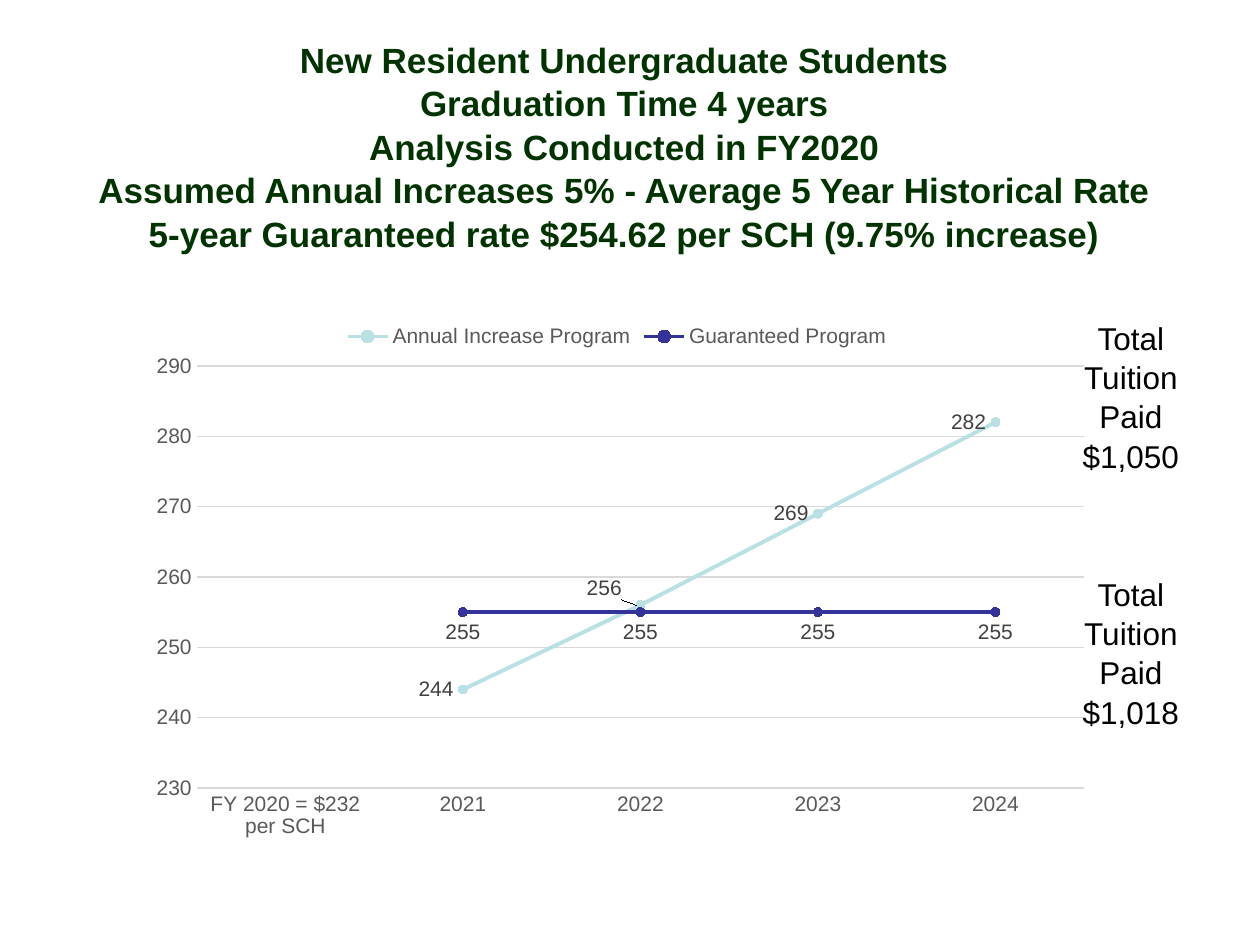
from pptx import Presentation
from pptx.chart.data import CategoryChartData
from pptx.dml.color import RGBColor
from pptx.enum.chart import (XL_CHART_TYPE, XL_LABEL_POSITION,
                             XL_LEGEND_POSITION, XL_MARKER_STYLE, XL_TICK_MARK)
from pptx.enum.text import MSO_ANCHOR, PP_ALIGN
from pptx.oxml import parse_xml
from pptx.oxml.ns import nsdecls
from pptx.util import Inches, Pt

LINE = XL_CHART_TYPE.LINE_MARKERS
LEFT, BELOW = XL_LABEL_POSITION.LEFT, XL_LABEL_POSITION.BELOW
TOP_KEY = XL_LEGEND_POSITION.TOP
DOT = XL_MARKER_STYLE.CIRCLE
NO_TICK = XL_TICK_MARK.NONE
CENTER = PP_ALIGN.CENTER
TOP, MIDDLE = MSO_ANCHOR.TOP, MSO_ANCHOR.MIDDLE

WIDE, HIGH = Inches(10), Inches(7.5)
FACE = "Arial"
GREEN, BLACK = "003300", "000000"
GRID, GRAY, DARK = "D9D9D9", "595959", "404040"
FORMAT = "#,##0"

TITLE = [
    "New Resident Undergraduate Students",
    "Graduation Time 4 years",
    "Analysis Conducted in FY2020",
    "Assumed Annual Increases 5% - Average 5 Year Historical Rate",
    "5-year Guaranteed rate $254.62 per SCH (9.75% increase)",
]
YEARS = ["FY 2020 = $232 per SCH", "2021", "2022", "2023", "2024"]
# name, values, colour, label place
PLANS = [
    ("Annual Increase Program", [None, 244, 256, 269, 282], "BBE0E3", LEFT),
    ("Guaranteed Program", [None, 255, 255, 255, 255], "333399", BELOW),
]
# top in inches, total paid
TOTALS = [(2.47, "$1,050"), (4.5, "$1,018")]


def color(code):
    return RGBColor.from_string(code)


def share(left, top, width, height):
    """Turn inches on the 10 by 7.5 page into shares of the slide's size."""
    return (int(WIDE * left / 10), int(HIGH * top / 7.5),
            int(WIDE * width / 10), int(HIGH * height / 7.5))


def style(font, size, code, bold=False):
    font.name, font.size, font.bold = FACE, Pt(size), bold
    font.color.rgb = color(code)


def write(slide, box, lines, size=18, code=BLACK, bold=False, anchor=TOP):
    frame = slide.shapes.add_textbox(*box).text_frame
    frame.word_wrap = True
    frame.vertical_anchor = anchor
    frame.text = "\n".join(lines)
    for para in frame.paragraphs:
        para.alignment = CENTER
        para.line_spacing = 1.04
        style(para.font, size, code, bold)


def stroke(line, code, width):
    line.color.rgb = color(code)
    line.width = Pt(width)


def layout(x, y, w=None, h=None):
    """Make a manual layout: an offset, or an inner plot area with a size."""
    parts = [("layoutTarget", "inner"), ("xMode", "edge"),
             ("yMode", "edge")] if w else []
    parts += [("x", x), ("y", y)]
    if w:
        parts += [("w", w), ("h", h)]
    inner = "".join(f'<c:{tag} val="{val}"/>' for tag, val in parts)
    return parse_xml(f'<c:layout {nsdecls("c")}><c:manualLayout>{inner}'
                     '</c:manualLayout></c:layout>')


def draw_axes(chart):
    for axis in (chart.category_axis, chart.value_axis):
        axis.major_tick_mark = axis.minor_tick_mark = NO_TICK
        style(axis.tick_labels.font, 12, GRAY)
    stroke(chart.category_axis.format.line, GRID, 0.75)
    axis = chart.value_axis
    axis.format.line.fill.background()
    axis.minimum_scale, axis.maximum_scale, axis.major_unit = 230, 290, 10
    axis.tick_labels.number_format = FORMAT
    axis.tick_labels.number_format_is_linked = False
    stroke(axis.major_gridlines.format.line, GRID, 0.75)


def draw_plan(plan, code, place):
    plan.smooth = False
    stroke(plan.format.line, code, 2.25)
    mark = plan.marker
    mark.style, mark.size = DOT, 5
    mark.format.fill.solid()
    mark.format.fill.fore_color.rgb = color(code)
    stroke(mark.format.line, code, 0.75)
    tags = plan.data_labels
    tags.show_value = True
    tags.position = place
    tags.number_format, tags.number_format_is_linked = FORMAT, False
    style(tags.font, 12, DARK)


def draw_chart(slide, box):
    data = CategoryChartData(number_format=FORMAT)
    data.categories = YEARS
    for name, vals, *_ in PLANS:
        data.add_series(name, vals)
    chart = slide.shapes.add_chart(LINE, *box, data).chart
    chart.has_title = False
    style(chart.font, 10, BLACK)
    chart.has_legend = True
    chart.legend.position = TOP_KEY
    chart.legend.include_in_layout = False
    style(chart.legend.font, 12, GRAY)
    draw_axes(chart)

    plot = chart.plots[0]
    plot.vary_by_categories = False
    for plan, (_, _, code, place) in zip(plot.series, PLANS):
        draw_plan(plan, code, place)

    # Lift the 2022 label clear of the crossing lines
    tag = plot.series[0].points[2].data_label
    style(tag.font, 12, DARK)
    tag.position = LEFT
    for node in plot.series[0].data_labels._element.xpath("c:dLbl/c:idx"):
        node.addnext(layout(-0.01, -0.03))

    # Fix the inner plot area
    area = chart._chartSpace.chart.plotArea
    for old in area.xpath("c:layout"):
        area.remove(old)
    area.insert(0, layout(0.05, 0.1, 0.95, 0.77))


def main():
    deck = Presentation()
    deck.slide_width, deck.slide_height = WIDE, HIGH
    slide = deck.slides.add_slide(deck.slide_layouts[6])
    # Title
    write(slide, share(0.33, 0.42, 9.25, 1.47), TITLE, size=20, code=GREEN,
          bold=True, anchor=MIDDLE)
    # Tuition chart
    draw_chart(slide, share(1.19, 2.47, 7.42, 4.35))
    # Totals beside the lines
    for top, paid in TOTALS:
        write(slide, share(8.27, top, 1.41, 1.31),
              ["Total Tuition", "Paid", paid])
    deck.save("out.pptx")


if __name__ == "__main__":
    main()
